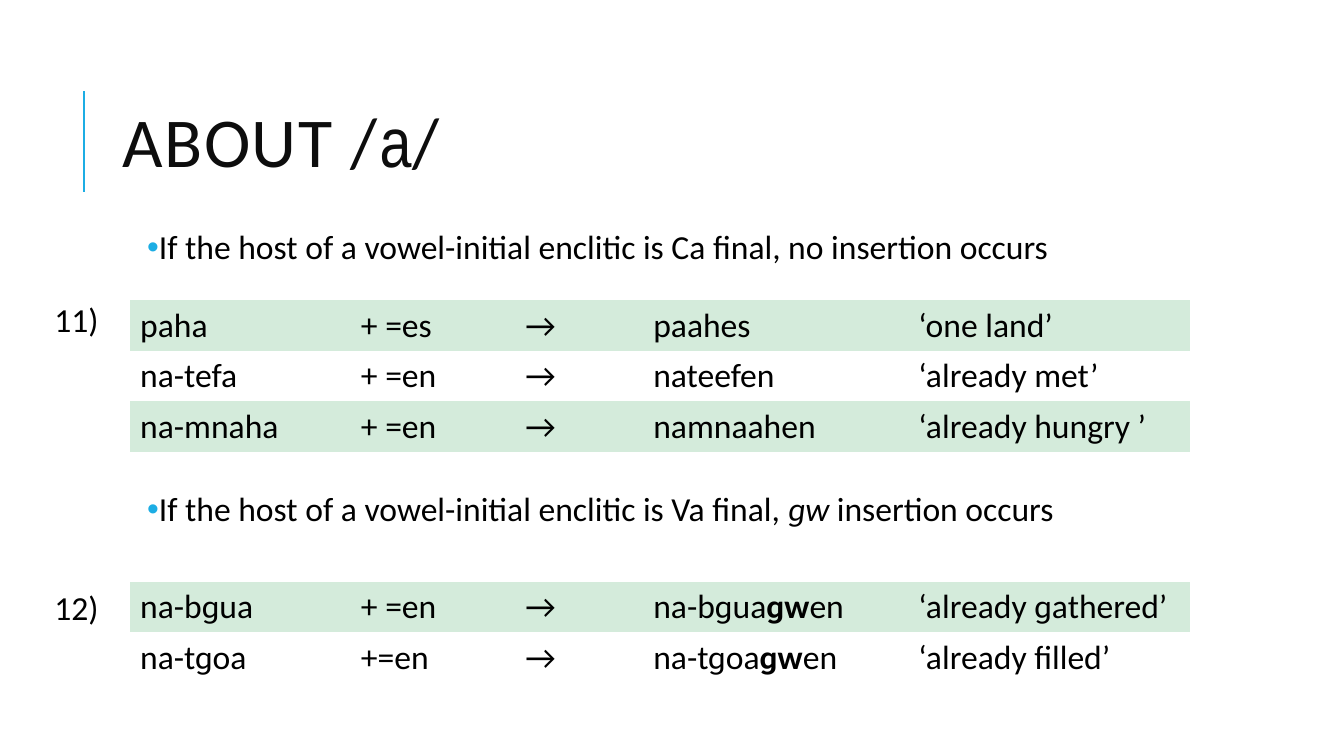
from lxml.etree import SubElement
from pptx import Presentation
from pptx.dml.color import RGBColor
from pptx.enum.shapes import MSO_CONNECTOR
from pptx.enum.text import MSO_ANCHOR, MSO_AUTO_SIZE
from pptx.oxml.ns import qn
from pptx.util import Inches, Pt

COLORS = {"accent": "1CADE4", "title": "0D0D0D", "text": "000000",
          "band": "D4EBDB", "plain": "FFFFFF"}
FONT = "Calibri"
TITLE_FONT = "Arial Narrow"
NO_STYLE_NO_GRID = "{2D5ABB26-0587-4C30-8999-92F81FD0307C}"
COLUMN_WIDTHS = [2.19, 1.63, 1.27, 2.63, 2.79]
ROW_HEIGHT = 0.5
TABLE_LEFT = 1.29

NO_INSERTION = [
    ["paha", "+ =es", "→", "paahes", "‘one land’"],
    ["na-tefa", "+ =en", "→", "nateefen", "‘already met’"],
    ["na-mnaha", "+ =en", "→", "namnaahen", "‘already hungry ’"],
]
GW_INSERTION = [
    ["na-bɡua", "+ =en", "→", ["na-bɡua", ("ɡw", "bold"), "en"], "‘already ɡathered’"],
    ["na-tɡoa", "+=en", "→", ["na-tɡoa", ("ɡw", "bold"), "en"], "‘already filled’"],
]


def rgb(name):
    return RGBColor.from_string(COLORS[name])


def write_runs(p, content, size=24, color="text"):
    """Fill a paragraph from a string or a list of strings and (string, style) pairs."""
    for part in [content] if isinstance(content, str) else content:
        text, style = (part, None) if isinstance(part, str) else part
        r = p.add_run()
        r.text = text
        r.font.name = FONT
        r.font.size = Pt(size)
        r.font.color.rgb = rgb(color)
        if style == "narrow":
            r.font.name = TITLE_FONT
        elif style:
            setattr(r.font, style, True)


def add_text_box(slide, left, top, width, height, wrap=True):
    tf = slide.shapes.add_textbox(*map(Inches, (left, top, width, height))).text_frame
    tf.word_wrap = wrap
    return tf


def add_title(slide, content):
    tf = add_text_box(slide, 1.12, 0.64, 10.63, 1.64)
    tf.vertical_anchor = MSO_ANCHOR.MIDDLE
    p = tf.paragraphs[0]
    p.line_spacing = 0.8
    write_runs(p, content, 50, "title")
    for r in p.runs:
        r.font._element.set("spc", "100")


def add_title_rule(slide):
    x = Inches(0.83)
    rule = slide.shapes.add_connector(MSO_CONNECTOR.STRAIGHT, x, Inches(1.9), x, Inches(0.9))
    rule.line.color.rgb = rgb("accent")
    rule.line.width = Pt(1.5)
    SubElement(rule._element.spPr, qn("a:effectLst"))


def add_bullet(slide, top, content):
    tf = add_text_box(slide, 1.41, top, 10.63, 0.93)
    tf.margin_left = tf.margin_right = tf.margin_top = tf.margin_bottom = Inches(0.05)
    p = tf.paragraphs[0]
    p.line_spacing = 0.9
    p.space_after = Pt(2)
    pPr = p._p.get_or_add_pPr()
    pPr.set("marL", str(Inches(0.1)))
    pPr.set("indent", str(-Inches(0.1)))
    color = SubElement(pPr, qn("a:buClr"))
    SubElement(color, qn("a:srgbClr"), val=COLORS["accent"])
    SubElement(pPr, qn("a:buFont"), typeface="Arial")
    SubElement(pPr, qn("a:buChar"), char="•")
    write_runs(p, content)


def add_example_table(slide, top, rows):
    table = slide.shapes.add_table(
        len(rows), len(COLUMN_WIDTHS), Inches(TABLE_LEFT), Inches(top),
        Inches(sum(COLUMN_WIDTHS)), Inches(ROW_HEIGHT * len(rows))).table
    table.first_row = table.horz_banding = False
    table._tbl.tblPr.find(qn("a:tableStyleId")).text = NO_STYLE_NO_GRID
    for column, width in zip(table.columns, COLUMN_WIDTHS):
        column.width = Inches(width)
    for i, row in enumerate(rows):
        table.rows[i].height = Inches(ROW_HEIGHT)
        for j, content in enumerate(row):
            cell = table.cell(i, j)
            cell.fill.solid()
            cell.fill.fore_color.rgb = rgb("plain" if i % 2 else "band")
            write_runs(cell.text_frame.paragraphs[0], content)


def add_example_number(slide, top, label):
    tf = add_text_box(slide, 0.44, top, 0.64, 0.5, wrap=False)
    tf.auto_size = MSO_AUTO_SIZE.SHAPE_TO_FIT_TEXT
    write_runs(tf.paragraphs[0], label)


def main():
    prs = Presentation()
    prs.slide_width, prs.slide_height = Inches(13.33), Inches(7.5)
    slide = prs.slides.add_slide(prs.slide_layouts[6])

    add_title_rule(slide)
    add_title(slide, ["ABOUT /", ("a", "narrow"), "/"])
    add_bullet(slide, 2.24,
               "If the host of a vowel-initial enclitic is Ca final, no insertion occurs")
    add_example_table(slide, 2.98, NO_INSERTION)
    add_bullet(slide, 4.84, ["If the host of a vowel-initial enclitic is Va final, ",
                             ("ɡw ", "italic"), "insertion occurs"])
    add_example_table(slide, 5.77, GW_INSERTION)
    add_example_number(slide, 2.92, "11)")
    add_example_number(slide, 5.77, "12)")

    prs.save("out.pptx")


if __name__ == "__main__":
    main()
